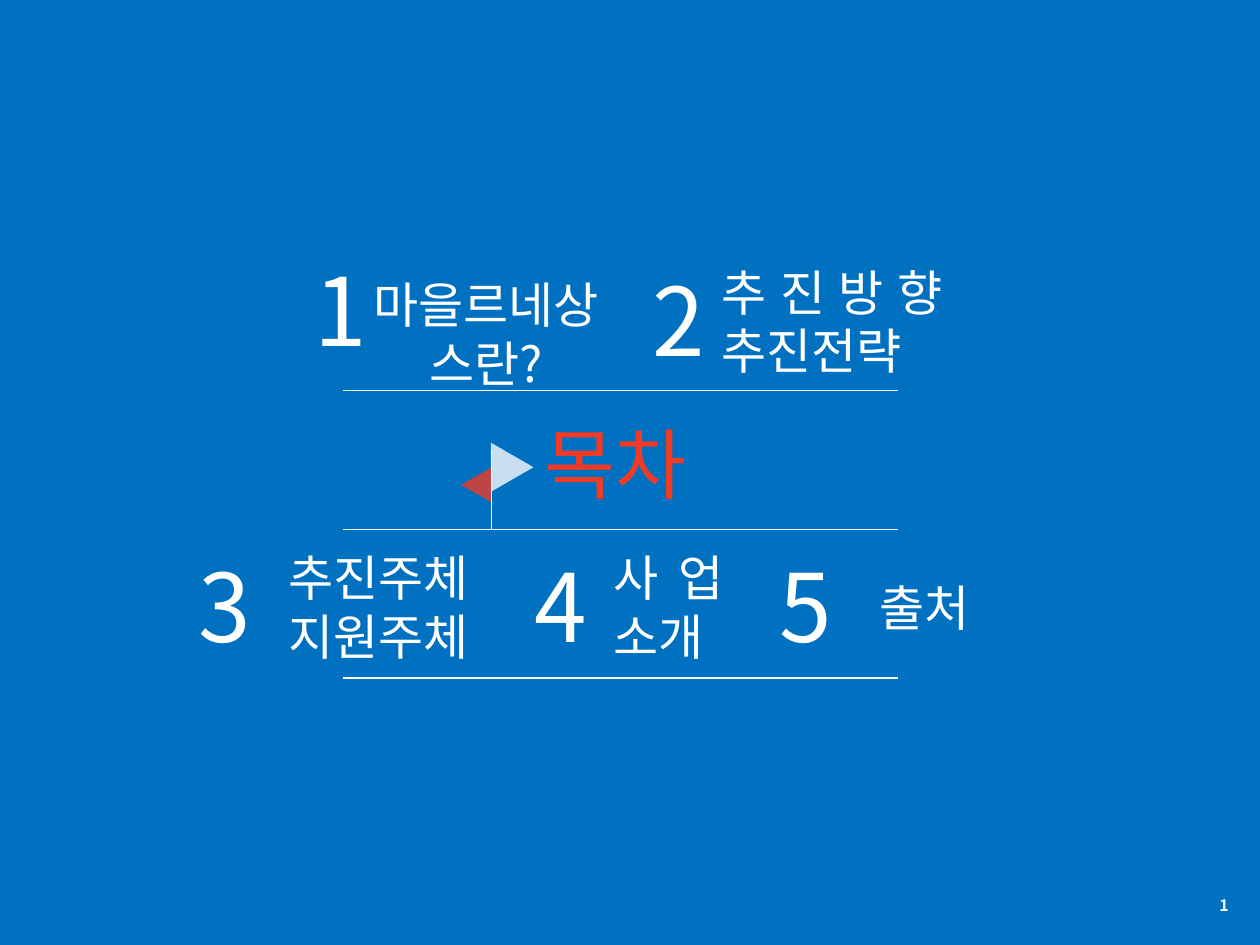
from dataclasses import dataclass

from lxml.etree import SubElement
from pptx import Presentation
from pptx.dml.color import RGBColor
from pptx.enum.shapes import MSO_CONNECTOR, MSO_SHAPE
from pptx.enum.text import MSO_ANCHOR, MSO_AUTO_SIZE, PP_ALIGN
from pptx.oxml.ns import qn
from pptx.util import Cm, Pt

FONT = "Noto Sans CJK KR"
HEX = {"blue": "0070C0", "white": "FFFFFF", "red": "F33A24"}


@dataclass
class Box:
    left: float
    top: float
    width: float
    height: float

    def place(self) -> list[Cm]:
        return [Cm(v) for v in (self.left, self.top, self.width, self.height)]


@dataclass
class Item:
    num: str
    num_box: Box
    lines: list[str]
    box: Box
    align: PP_ALIGN = PP_ALIGN.JUSTIFY


@dataclass
class Flag:
    box: Box
    turn: int
    tint: str


def color(name: str) -> RGBColor:
    return RGBColor.from_string(HEX[name])


def add_text(slide, box: Box, lines: list[str], size: int, align: PP_ALIGN,
             tint: str = "white", bold: bool = False):
    frame = slide.shapes.add_textbox(*box.place()).text_frame
    frame.word_wrap = True
    frame.auto_size = MSO_AUTO_SIZE.SHAPE_TO_FIT_TEXT
    for i, line in enumerate(lines):
        para = frame.add_paragraph() if i else frame.paragraphs[0]
        para.alignment = align
        run = para.add_run()
        run.text = line
        font = run.font
        font.name, font.size, font.bold = FONT, Pt(size), bold
        font.color.rgb = color(tint)
        # Hangul takes the East Asian typeface
        SubElement(font._element, qn("a:ea")).set("typeface", FONT)
    return frame


def add_line(slide, x1: float, y1: float, x2: float, y2: float) -> None:
    line = slide.shapes.add_connector(
        MSO_CONNECTOR.STRAIGHT, Cm(x1), Cm(y1), Cm(x2), Cm(y2))
    line.line.color.rgb = color("white")
    line.line.width = Pt(0.75)
    SubElement(line._element.spPr, qn("a:effectLst"))


def add_fill(slide, kind: MSO_SHAPE, box: Box, tint: str):
    shape = slide.shapes.add_shape(kind, *box.place())
    shape.shadow.inherit = False
    shape.fill.solid()
    shape.fill.fore_color.rgb = color(tint)
    shape.line.fill.background()
    return shape


def add_flag(slide, flag: Flag) -> None:
    shape = add_fill(slide, MSO_SHAPE.ISOSCELES_TRIANGLE, flag.box, flag.tint)
    shape.rotation = flag.turn
    tone = shape._element.spPr.find(qn("a:solidFill"))[0]
    SubElement(tone, qn("a:alpha")).set("val", "78000")


def add_item(slide, item: Item) -> None:
    add_text(slide, item.num_box, [item.num], 54, PP_ALIGN.LEFT)
    add_text(slide, item.box, item.lines, 28, item.align)


LOW = 10.92  # top of the lower row
ITEMS = [
    Item("1", Box(6.1, 4.95, 2.06, 2.57), ["마을르네상스란?"],
         Box(7.11, 5.41, 5.38, 3.84), PP_ALIGN.CENTER),
    Item("2", Box(12.9, 5.16, 0.58, 2.57), ["추진방향추진전략"],
         Box(14.3, 5.16, 4.95, 2.64)),
    Item("3", Box(3.76, LOW, 2.29, 2.57), ["추진주체", "지원주체"],
         Box(5.56, LOW, 4.95, 2.64)),
    Item("4", Box(10.52, LOW, 1.8, 2.57), ["사업소개"],
         Box(12.12, LOW, 2.72, 2.64)),
    Item("5", Box(15.47, LOW, 1.88, 2.57), ["출처"],
         Box(17.48, 11.51, 2.97, 1.45)),
]
RULES = [7.87, 10.67, 13.67]
FLAGS = [
    Flag(Box(9.83, 8.99, 0.99, 0.86), 90, "white"),
    Flag(Box(9.25, 9.47, 0.69, 0.61), 270, "red"),
]


def main() -> None:
    deck = Presentation()
    deck.slide_width, deck.slide_height = Cm(25.4), Cm(19.05)
    slide = deck.slides.add_slide(deck.slide_layouts[6])

    # Backdrop and rules
    add_fill(slide, MSO_SHAPE.RECTANGLE, Box(0, 0, 25.4, 19.05), "blue")
    for y in RULES:
        add_line(slide, 6.91, y, 18.11, y)

    # Title with its flag
    add_text(slide, Box(6.71, 8.28, 11.4, 2.13), ["목차"], 44,
             PP_ALIGN.CENTER, "red")
    add_line(slide, 9.91, 9.07, 9.91, RULES[1])
    for flag in FLAGS:
        add_flag(slide, flag)

    # Contents
    for item in ITEMS:
        add_item(slide, item)

    # Page number
    page = add_text(slide, Box(19.1, 17.73, 5.92, 1.02), ["1"], 9,
                    PP_ALIGN.RIGHT, bold=True)
    page.auto_size = MSO_AUTO_SIZE.NONE
    page.vertical_anchor = MSO_ANCHOR.MIDDLE

    deck.save("out.pptx")


if __name__ == "__main__":
    main()
